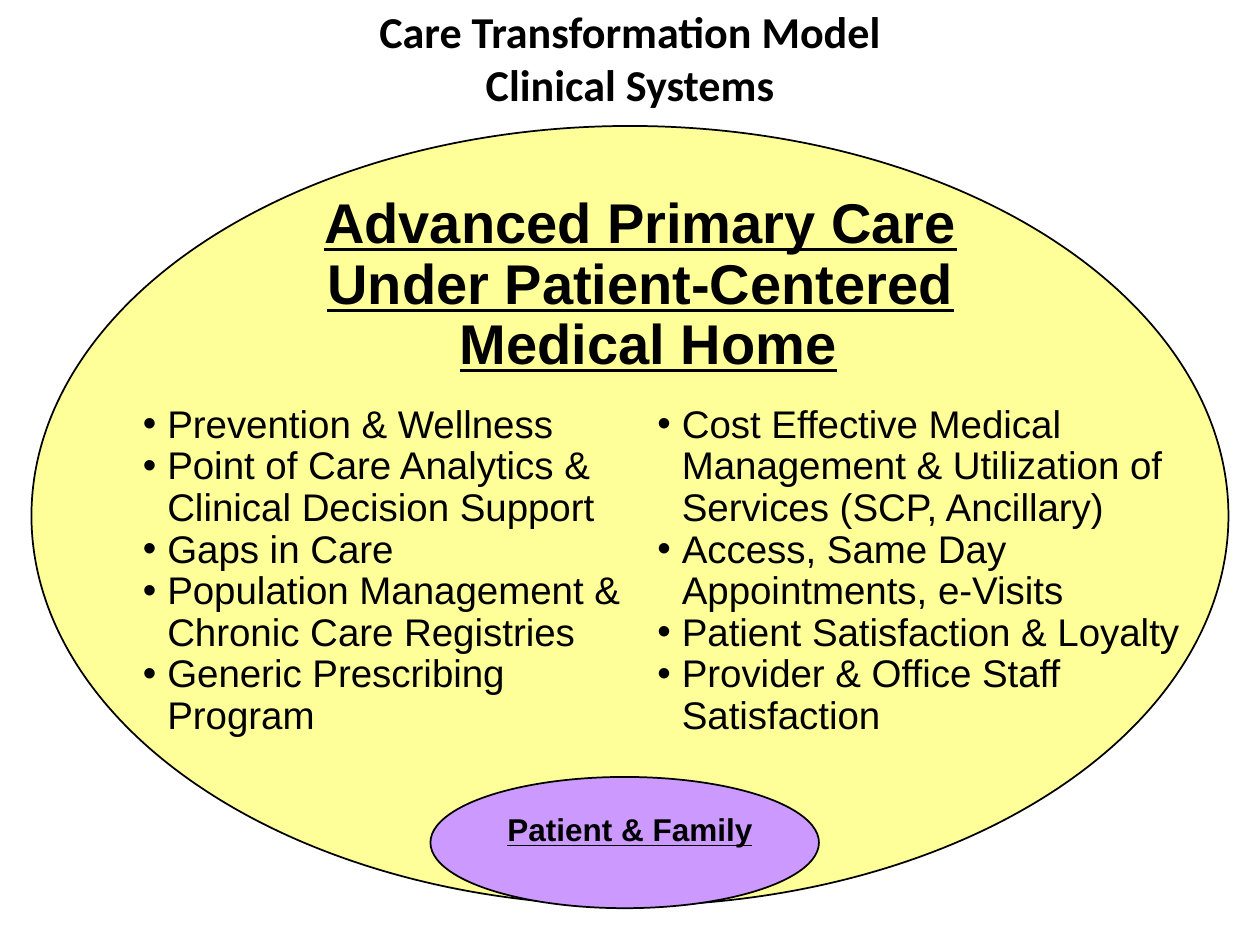
from dataclasses import dataclass

from lxml.etree import SubElement
from pptx import Presentation
from pptx.dml.color import RGBColor
from pptx.enum.shapes import MSO_SHAPE
from pptx.enum.text import MSO_ANCHOR, MSO_AUTO_SIZE, PP_ALIGN
from pptx.oxml.ns import qn
from pptx.util import Pt


@dataclass(frozen=True)
class Theme:
    ink: str = "000000"
    outer: str = "FFFF99"
    core: str = "CC99FF"
    title_font: str = "Calibri"
    body_font: str = "Arial"
    title_size: float = 25.2
    heading_size: float = 32
    label_size: float = 18
    list_size: float = 22
    inset: float = 3.6
    line_spacing: float = 0.9


class SlideBuilder:
    def __init__(self, slide, theme):
        self.s = slide
        self.theme = theme

    def format_font(self, font, **values):
        for name, value in values.items():
            setattr(font, name, value)
        font.color.rgb = RGBColor.from_string(self.theme.ink)

    def title(self, text, left, top, width, height):
        sp = self.s.shapes.title
        sp.left, sp.top, sp.width, sp.height = map(Pt, (left, top, width, height))
        tf = sp.text_frame
        tf.auto_size = MSO_AUTO_SIZE.NONE
        tf.vertical_anchor = MSO_ANCHOR.MIDDLE
        tf.text = text
        p = tf.paragraphs[0]
        p.alignment = PP_ALIGN.CENTER
        for r in p.runs:
            self.format_font(r.font, name=self.theme.title_font,
                             size=Pt(self.theme.title_size), bold=True)

    def ellipse(self, fill, left, top, width, height):
        sp = self.s.shapes.add_shape(
            MSO_SHAPE.OVAL, *map(Pt, (left, top, width, height)))
        sp.shadow.inherit = False
        sp.fill.solid()
        sp.fill.fore_color.rgb = RGBColor.from_string(fill)
        sp.line.color.rgb = RGBColor.from_string(self.theme.ink)
        sp.line.width = Pt(1)

    def text(self, lines, box, size, indent, bullet=False, **font):
        sp = self.s.shapes.add_textbox(*map(Pt, box))
        tf = sp.text_frame
        frame = {"word_wrap": True, "auto_size": MSO_AUTO_SIZE.SHAPE_TO_FIT_TEXT}
        for side in ("left", "top", "right", "bottom"):
            frame[f"margin_{side}"] = Pt(self.theme.inset)
        for name, value in frame.items():
            setattr(tf, name, value)
        tf.text = "\n".join(lines)
        for p in tf.paragraphs:
            p.alignment = PP_ALIGN.LEFT if bullet else PP_ALIGN.CENTER
            p.line_spacing = self.theme.line_spacing
            self.hang(p, indent, bullet)
            for r in p.runs:
                self.format_font(r.font, name=self.theme.body_font,
                                 size=Pt(size), **font)

    def hang(self, p, indent, bullet):
        pPr = p._p.get_or_add_pPr()
        pPr.set("marL", str(Pt(indent)))
        pPr.set("indent", str(-Pt(indent)))
        if bullet:
            color = SubElement(pPr, qn("a:buClr"))
            SubElement(color, qn("a:srgbClr"), val=self.theme.ink)
            SubElement(pPr, qn("a:buFont"), typeface=self.theme.body_font)
            SubElement(pPr, qn("a:buChar"), char="•")


def main():
    theme = Theme()
    prs = Presentation()
    prs.slide_width, prs.slide_height = Pt(720), Pt(540)
    b = SlideBuilder(prs.slides.add_slide(prs.slide_layouts[5]), theme)

    # Title
    b.title("Care Transformation Model\vClinical Systems", 0, 0, 720, 65.5)

    # Care model with the patient at its core
    b.ellipse(theme.outer, 18, 72, 684, 445.5)
    b.ellipse(theme.core, 246, 444, 222, 75)

    # Headings
    emphasis = {"bold": True, "underline": True}
    b.text(["Patient & Family"], (162, 462, 396, 27),
           theme.label_size, 9, **emphasis)
    b.text(["Advanced Primary Care", "Under Patient-Centered Medical Home"],
           (144, 108, 444, 111), theme.heading_size, 9, **emphasis)

    # Two bulleted columns
    columns = [
        (78, 318, [
            "Prevention & Wellness",
            "Point of Care Analytics & Clinical Decision Support",
            "Gaps in Care",
            "Population Management & Chronic Care Registries",
            "Generic Prescribing\vProgram",
        ]),
        (372, 348, [
            "Cost Effective Medical Management & Utilization of "
            "Services (SCP, Ancillary)",
            "Access, Same Day Appointments, e-Visits",
            "Patient Satisfaction & Loyalty",
            "Provider & Office Staff Satisfaction",
        ]),
    ]
    for left, width, items in columns:
        b.text(items, (left, 228, width, 197), theme.list_size, 14, bullet=True)

    prs.save("out.pptx")


if __name__ == "__main__":
    main()
